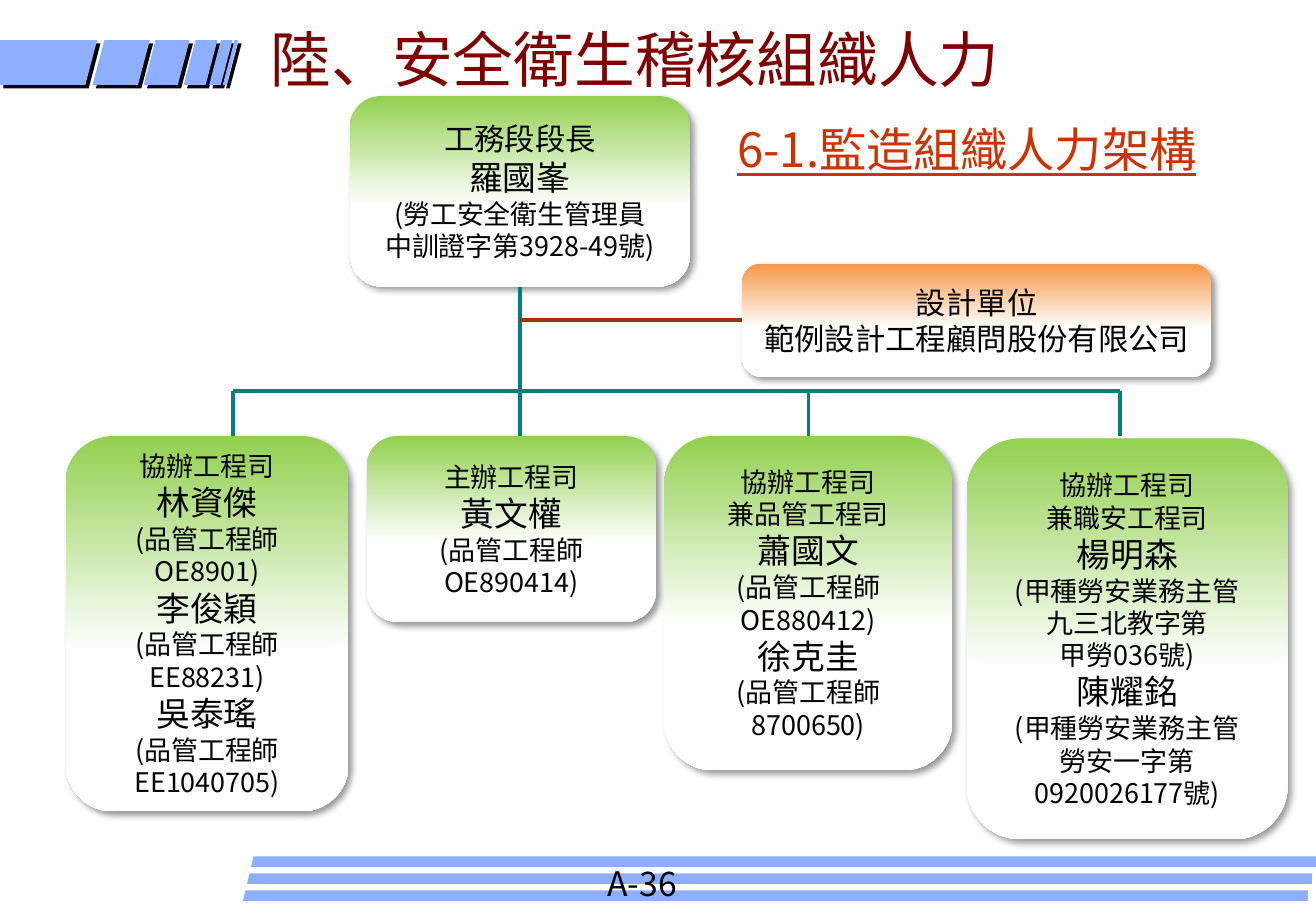
from lxml import etree
from pptx import Presentation
from pptx.dml.color import RGBColor
from pptx.enum.shapes import MSO_CONNECTOR, MSO_SHAPE
from pptx.enum.text import MSO_ANCHOR, MSO_AUTO_SIZE, PP_ALIGN
from pptx.oxml.ns import qn
from pptx.util import Pt

STRAIGHT = MSO_CONNECTOR.STRAIGHT
ROUNDED = MSO_SHAPE.ROUNDED_RECTANGLE
MIDDLE, TOP = MSO_ANCHOR.MIDDLE, MSO_ANCHOR.TOP
LEFT, CENTER = PP_ALIGN.LEFT, PP_ALIGN.CENTER
NO_FIT = MSO_AUTO_SIZE.NONE

FONT = "Noto Sans CJK SC"
BLUE, GREEN, ORANGE, TEAL, BROWN = "8DAFFE", "92D050", "F79646", "008080", "993300"
BOTTOM_SIDE, TOP_SIDE, LEFT_SIDE = 2, 0, 1

# Staff boxes: left, top, width, height, lines of (text, size)
STAFF = {
    "assistant": ((38.9, 258.5, 167.8, 222.5), [
        ("協辦工程司", 16), ("林資傑", 20), ("(品管工程師OE8901)", 16),
        ("李俊穎", 20), ("(品管工程師EE88231)", 16),
        ("吳泰瑤", 20), ("(品管工程師EE1040705)", 16)]),
    "lead": ((217.4, 258.5, 171.4, 110.2), [
        ("主辦工程司", 16), ("黃文權", 20), ("(品管工程師OE890414)", 16)]),
    "quality": ((393.8, 258.5, 170.6, 198), [
        ("協辦工程司", 16), ("兼品管工程司", 16),
        ("蕭國文", 20), ("(品管工程師OE880412)", 16),
        ("徐克圭", 20), ("(品管工程師8700650)", 16)]),
    "safety": ((573.1, 259.9, 190.1, 237.6), [
        ("協辦工程司", 16), ("兼職安工程司", 16),
        ("楊明森", 20), ("(甲種勞安業務主管", 16), ("九三北教字第", 16), ("甲勞036號)", 16),
        ("陳耀銘", 20), ("(甲種勞安業務主管", 16), ("勞安一字第", 16), ("0920026177號)", 16)]),
}
CHIEF = [("工務段段長", 18), ("羅國峯", 20), ("(勞工安全衛生管理員", 16), ("中訓證字第3928-49號)", 16)]
DESIGNER = [("設計單位", 18), ("範例設計工程顧問股份有限公司", 18)]


def color(value):
    return RGBColor.from_string(value)


def add_shadow(shape, alpha, blur, distance):
    shape.shadow.inherit = False
    effects = shape._element.spPr.find(qn("a:effectLst"))
    outer = etree.SubElement(effects, qn("a:outerShdw"), blurRad=str(Pt(blur)),
                             dist=str(Pt(distance)), dir="2700000", algn="tl", rotWithShape="0")
    black = etree.SubElement(outer, qn("a:srgbClr"), val="000000")
    etree.SubElement(black, qn("a:alpha"), val=str(alpha * 1000))


def write_lines(frame, lines, ink="000000", align=LEFT, anchor=TOP, underline=None):
    frame.word_wrap = True
    frame.auto_size = NO_FIT
    frame.vertical_anchor = anchor
    frame.text = "\n".join(text for text, size in lines)
    for para, (text, size) in zip(frame.paragraphs, lines):
        para.alignment = align
        for span in para.runs:
            span.font.size = Pt(size)
            span.font.name = FONT
            span.font.color.rgb = color(ink)
            span.font.underline = underline
            latin = span.font._element.find(qn("a:latin"))
            latin.addnext(etree.Element(qn("a:ea"), typeface=FONT))


def add_text(page, box, lines, **style):
    label = page.shapes.add_textbox(*map(Pt, box))
    write_lines(label.text_frame, lines, **style)


def add_polygon(page, points):
    corners = [(Pt(x), Pt(y)) for x, y in points]
    builder = page.shapes.build_freeform(*corners[0], scale=1.0)
    builder.add_line_segments(corners[1:], close=True)
    polygon = builder.convert_to_shape()
    polygon.fill.solid()
    polygon.fill.fore_color.rgb = color(BLUE)
    polygon.line.fill.background()
    polygon.shadow.inherit = False
    return polygon


def add_header(page, left, top, width, height):
    slant = 7
    # Solid bar, then slashes that grow narrower
    bars = [[(0, 0), (57.6, 0), (57.6 - slant, height), (0, height)]]
    for start, size in ((61.9, 26.9), (92.2, 20.2), (115.9, 13), (131, 6.9), (139, 2.2)):
        bars.append([(start, 0), (start + size, 0),
                     (start + size - slant, height), (start - slant, height)])
    for bar in bars:
        add_shadow(add_polygon(page, [(left + x, top + y) for x, y in bar]), 100, 0, 2.8)
    add_text(page, (left + 153.4, top - 14.4, width, 51), [("陸、安全衛生稽核組織人力", 36)],
             ink="800000")


def add_footer(page, left, top, width):
    height, slant = 6.2, 1.5
    for row in range(3):
        x, y = left + 2.4 * row, top - 10.1 * row
        add_polygon(page, [(x + slant, y), (x + width, y),
                           (x + width, y + height), (x, y + height)])
    add_text(page, (left + 208.8, top - 20.2, 87, 32), [("A-36", 20)])


def add_card(page, box, lines, tint=GREEN):
    card = page.shapes.add_shape(ROUNDED, *map(Pt, box))
    card.adjustments[0] = 0.167
    card.fill.gradient()
    card.fill.gradient_angle = 270
    for stop, position, value in zip(card.fill.gradient_stops, (0, 0.57), (tint, "FFFFFF")):
        stop.position = position
        stop.color.rgb = color(value)
    card.line.fill.background()
    add_shadow(card, 40, 4, 3)
    frame = card.text_frame
    frame.margin_left = frame.margin_right = Pt(7.2)
    frame.margin_top = frame.margin_bottom = Pt(8.64)
    write_lines(frame, lines, align=CENTER, anchor=MIDDLE)
    return card


def add_line(page, start, end, ink=TEAL):
    line = page.shapes.add_connector(STRAIGHT, *map(Pt, start + end))
    line.line.color.rgb = color(ink)
    line.line.width = Pt(2)
    etree.SubElement(line._element.spPr, qn("a:effectLst"))
    return line


def add_chart_tree(page, left, top):
    trunk_x, bus_y, staff_y = left + 269.3, top + 175, top + 201.6
    drops = {"assistant": left + 99.1, "quality": left + 440.2, "safety": left + 625}

    # Cards
    chief = add_card(page, (left + 168.5, top, 201.6, 113), CHIEF)
    designer = add_card(page, (left + 401, top + 99.4, 278, 67), DESIGNER, ORANGE)
    staff = {role: add_card(page, box, lines) for role, (box, lines) in STAFF.items()}

    # Lines
    trunk = add_line(page, (trunk_x, top + 113), (trunk_x, staff_y))
    trunk.begin_connect(chief, BOTTOM_SIDE)
    add_line(page, (drops["assistant"], bus_y), (drops["safety"], bus_y))
    for role, x in drops.items():
        drop = add_line(page, (x, bus_y), (x, staff_y))
        if role == "quality":
            drop.end_connect(staff[role], TOP_SIDE)
    side_y = top + 132.9
    branch = add_line(page, (trunk_x, side_y), (left + 401, side_y), BROWN)
    branch.end_connect(designer, LEFT_SIDE)


def main():
    deck = Presentation()
    deck.slide_width, deck.slide_height = Pt(780), Pt(540)
    page = deck.slides.add_slide(deck.slide_layouts[5])

    add_footer(page, 144, 527.8, 631.2)
    add_header(page, 0, 23.8, 450.7, 26.6)

    # Section title
    title = page.shapes.title
    title.left, title.top, title.width, title.height = map(Pt, (429.8, 67.7, 339.8, 54))
    write_lines(title.text_frame, [("6-1.監造組織人力架構", 28)], ink="CC3300", underline=True)

    add_chart_tree(page, 38.9, 56.9)
    deck.save("out.pptx")


if __name__ == "__main__":
    main()
